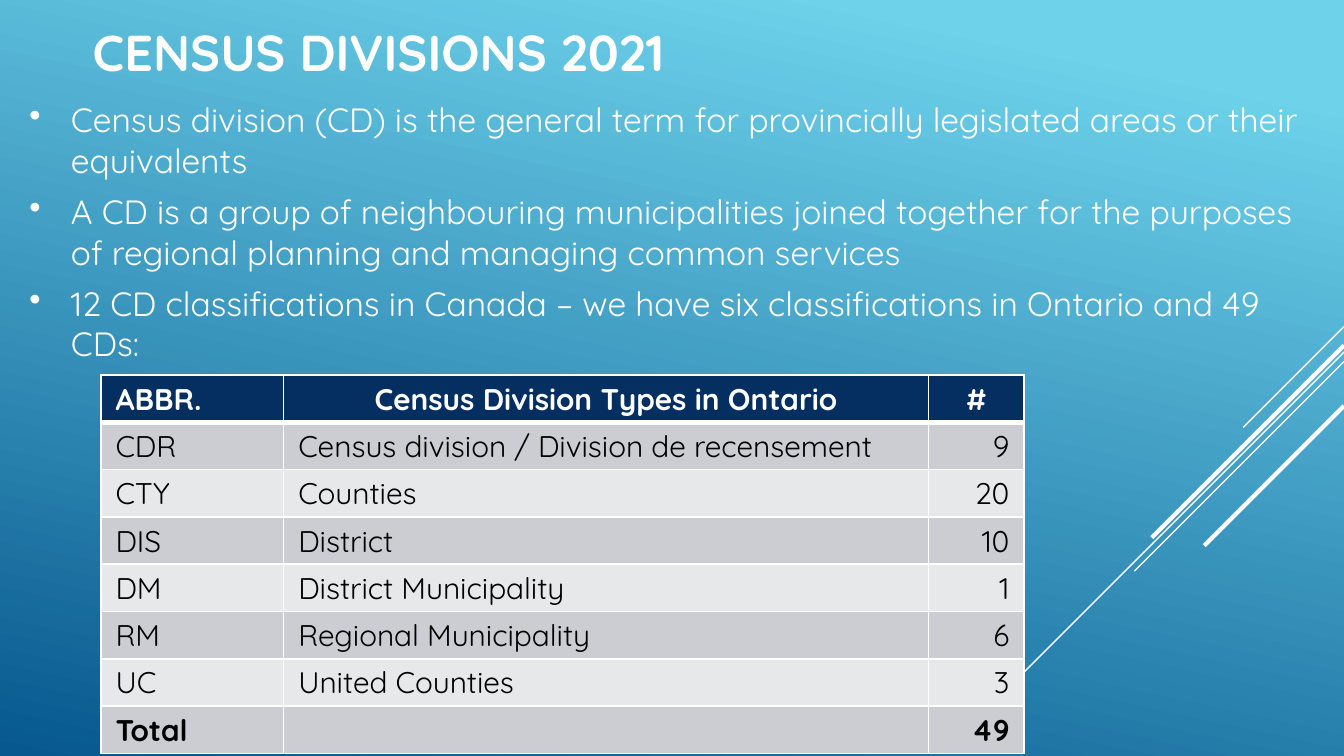
from dataclasses import dataclass

from lxml import etree
from pptx import Presentation
from pptx import util as u
from pptx.dml.color import RGBColor
from pptx.enum import shapes, text
from pptx.oxml import ns


@dataclass(frozen=True)
class Theme:
    font: str = "Quicksand"
    white: str = "FFFFFF"
    black: str = "000000"
    navy: str = "052F61"
    bands: tuple = ("CCCDD2", "E7E8EA")
    sky: str = "6ED2EB"
    sea: str = "06588E"
    title_size: float = 27
    body_size: float = 18
    table_size: float = 16


class Deck:
    """Holds the theme and the current slide; lengths are grid units."""

    columns, rows = 100, 56.25

    def __init__(self, theme):
        self.theme = theme
        self.show = Presentation()
        self.show.slide_width = u.Inches(10)
        self.show.slide_height = u.Inches(5.625)
        self.slide = self.show.slides.add_slide(self.show.slide_layouts[6])

    def x(self, columns):
        return round(self.show.slide_width * columns / self.columns)

    def y(self, rows):
        return round(self.show.slide_height * rows / self.rows)

    def place(self, left, top, width, height):
        return self.x(left), self.y(top), self.x(width), self.y(height)

    def background(self, angle):
        fill = self.slide.background.fill
        fill.gradient()
        fill.gradient_angle = angle
        stops = ((0.1, self.theme.sky), (1, self.theme.sea))
        for stop, (position, color) in zip(fill.gradient_stops, stops):
            stop.position = position
            stop.color.rgb = RGBColor.from_string(color)

    def diagonal(self, top, reach, weight):
        """A 45 degree line running down and left from the right edge."""
        ray = self.slide.shapes.add_connector(
            shapes.MSO_CONNECTOR.STRAIGHT, self.x(self.columns), self.y(top),
            self.x(self.columns - reach), self.y(top + reach))
        ray.line.color.rgb = RGBColor.from_string(self.theme.white)
        ray.line.width = u.Pt(weight)
        etree.SubElement(ray._element.spPr, ns.qn("a:effectLst"))

    def set_words(self, paragraph, words, size, color, bold=False):
        paragraph.text = words
        font = paragraph.font
        font.name, font.size, font.bold = self.theme.font, u.Pt(size), bold
        font.color.rgb = RGBColor.from_string(color)

    def text_frame(self, *box):
        frame = self.slide.shapes.add_textbox(*self.place(*box)).text_frame
        frame.word_wrap = True
        return frame

    def title(self, words, box, indent):
        frame = self.text_frame(*box)
        frame.vertical_anchor = text.MSO_ANCHOR.MIDDLE
        frame.margin_left = self.x(indent)
        self.set_words(frame.paragraphs[0], words, self.theme.title_size,
                       self.theme.white, bold=True)

    def bullets(self, points, box, indent):
        frame = self.text_frame(*box)
        for i, point in enumerate(points):
            paragraph = frame.add_paragraph() if i else frame.paragraphs[0]
            self.set_words(paragraph, point, self.theme.body_size,
                           self.theme.white)
            paragraph.space_after = u.Pt(6 if i < len(points) - 1 else 0)
            properties = paragraph._p.get_or_add_pPr()
            properties.set("marL", str(self.x(indent)))
            properties.set("indent", str(-self.x(indent)))
            bullet = etree.Element(ns.qn("a:buChar"), char="•")
            properties.find(ns.qn("a:defRPr")).addprevious(bullet)

    def borders(self, cell, **weights):
        properties = cell._tc.get_or_add_tcPr()
        for i, side in enumerate("LRTB"):
            line = etree.Element(ns.qn(f"a:ln{side}"),
                                 w=str(u.Pt(weights.get(side, 1))))
            fill = etree.SubElement(line, ns.qn("a:solidFill"))
            etree.SubElement(fill, ns.qn("a:srgbClr"), val=self.theme.white)
            properties.insert(i, line)

    def table(self, records, left, top, widths, row_height):
        grid = self.slide.shapes.add_table(
            len(records), len(widths),
            *self.place(left, top, sum(widths), row_height * len(records))).table
        for column, width in zip(grid.columns, widths):
            column.width = self.x(width)
        last = len(records) - 1
        align = text.PP_ALIGN
        for r, record in enumerate(records):
            header = r == 0
            alignments = (align.LEFT, align.CENTER if header else align.LEFT,
                          align.CENTER if header else align.RIGHT)
            color = self.theme.navy if header else self.theme.bands[(r - 1) % 2]
            for c, words in enumerate(record):
                cell = grid.cell(r, c)
                cell.margin_left = cell.margin_right = self.x(1.1)
                cell.margin_top = cell.margin_bottom = self.y(0.4)
                cell.fill.solid()
                cell.fill.fore_color.rgb = RGBColor.from_string(color)
                paragraph = cell.text_frame.paragraphs[0]
                self.set_words(paragraph, words, self.theme.table_size,
                               self.theme.white if header else self.theme.black,
                               bold=r in (0, last))
                paragraph.alignment = alignments[c]
                self.borders(cell, B=3 if header else 1, T=3 if r == 1 else 1)


def main():
    deck = Deck(Theme())
    deck.background(angle=258)

    # Diagonal rays at the right edge: top, reach, weight
    for ray in ((24.3, 7.5, 0.75), (26.2, 24.5, 0.75), (26.9, 15.6, 0.75),
                (25.7, 14.3, 2.25), (30.2, 10.4, 2.25)):
        deck.diagonal(*ray)

    # Heading
    deck.title("CENSUS DIVISIONS 2021", (2.9, 0.4, 95, 6.9), indent=4)

    # Census division counts
    division_types = [
        ("ABBR.", "Census Division Types in Ontario", "#"),
        ("CDR", "Census division / Division de recensement", "9"),
        ("CTY", "Counties", "20"),
        ("DIS", "District", "10"),
        ("DM", "District Municipality", "1"),
        ("RM", "Regional Municipality", "6"),
        ("UC", "United Counties", "3"),
        ("Total", "", "49"),
    ]
    deck.table(division_types, 7.5, 27.9, (13.6, 48, 7.1), 3.52)

    # Definition points
    deck.bullets([
        "Census division (CD) is the general term for provincially legislated "
        "areas or their equivalents",
        "A CD is a group of neighbouring municipalities joined together for the "
        "purposes of regional planning and managing common services",
        "12 CD classifications in Canada – we have six classifications in "
        "Ontario and 49 CDs:",
    ], (1.2, 6.9, 98.4, 17.8), indent=3.1)

    deck.show.save("out.pptx")


if __name__ == "__main__":
    main()
